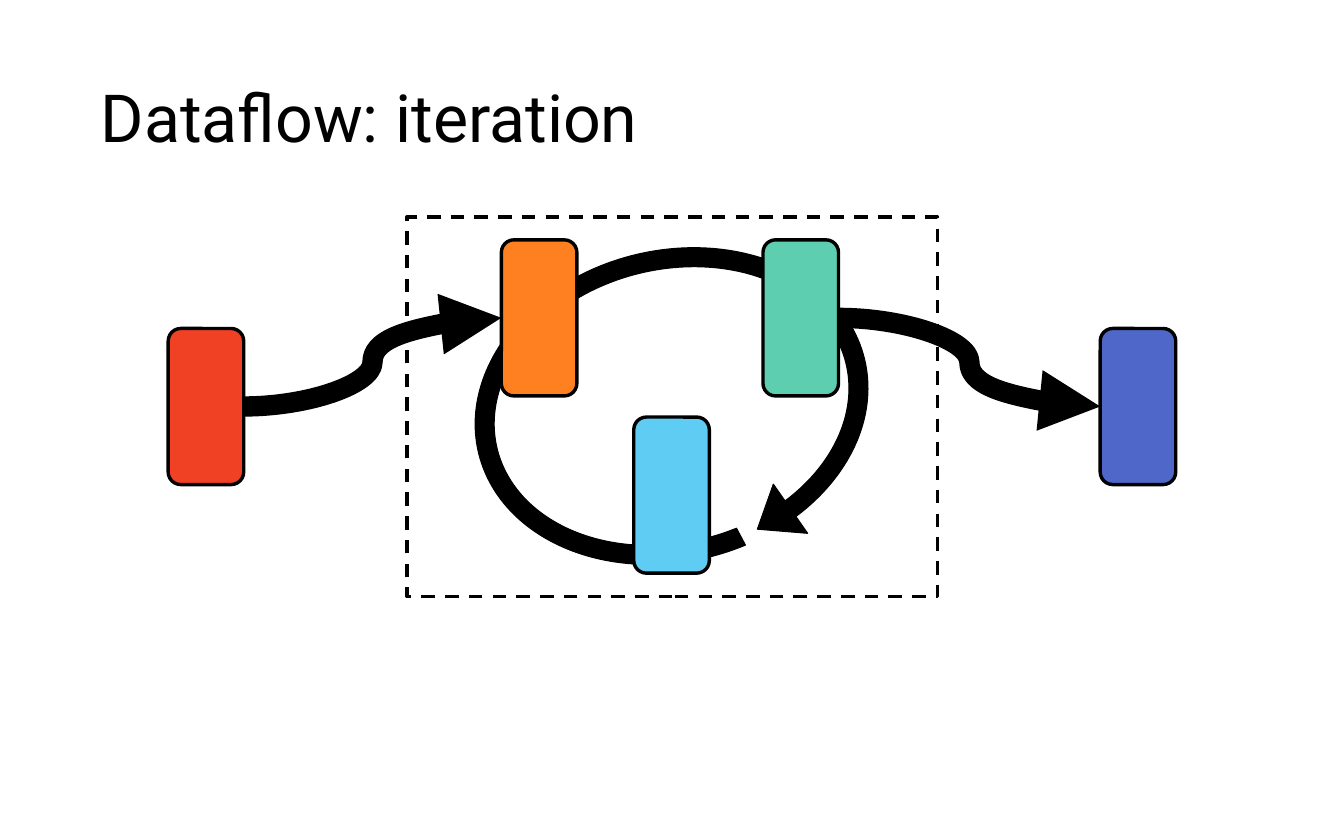
from collections import namedtuple
from dataclasses import dataclass

from lxml.etree import SubElement
from pptx import Presentation
from pptx.dml.color import RGBColor
from pptx.enum.dml import MSO_LINE
from pptx.enum.shapes import MSO_CONNECTOR, MSO_SHAPE
from pptx.enum.text import MSO_ANCHOR, MSO_AUTO_SIZE, PP_ALIGN
from pptx.oxml.ns import qn
from pptx.util import Emu, Pt

PX = 9144
Box = namedtuple("Box", "left top width height")


@dataclass(frozen=True)
class Theme:
    font: str = "Roboto"
    title_size: float = 58.7
    ink: str = "000000"
    source: str = "F14124"
    entry: str = "FF8021"
    exit: str = "5DCEAF"
    feedback: str = "5ECCF3"
    sink: str = "4E67C8"
    thin: int = 1
    outline: int = 3
    flow: int = 18


THEME = Theme()


def px(*lengths):
    return [Emu(length * PX) for length in lengths]


def inside(box, left, top, width, height):
    return Box(box.left + left, box.top + top, width, height)


def set_line(line, weight):
    line.color.rgb = RGBColor.from_string(THEME.ink)
    line.width = Pt(weight)


def add_block(slide, preset, box, fill, weight):
    block = slide.shapes.add_shape(preset, *px(*box))
    block.shadow.inherit = False
    if fill:
        block.fill.solid()
        block.fill.fore_color.rgb = RGBColor.from_string(fill)
    else:
        block.fill.background()
    set_line(block.line, weight)
    return block


def add_flow(slide, origin, target):
    start = (origin.left + origin.width, origin.top + origin.height // 2)
    end = (target.left, target.top + target.height // 2)
    flow = slide.shapes.add_connector(MSO_CONNECTOR.CURVE, *px(*start, *end))
    set_line(flow.line, THEME.flow)
    SubElement(flow.line._get_or_add_ln(), qn("a:tailEnd"), type="triangle")
    SubElement(flow._element.spPr, qn("a:effectLst"))


def draw_title(slide, box):
    title = slide.shapes.title
    title.left, title.top, title.width, title.height = px(*box)
    frame = title.text_frame
    frame.text = "Dataflow: iteration"
    frame.word_wrap = True
    frame.auto_size = MSO_AUTO_SIZE.NONE
    frame.vertical_anchor = MSO_ANCHOR.MIDDLE
    heading = frame.paragraphs[0]
    heading.alignment = PP_ALIGN.LEFT
    heading.line_spacing = 0.9
    font = heading.runs[0].font
    font.name = THEME.font
    font.size = Pt(THEME.title_size)
    font.color.rgb = RGBColor.from_string(THEME.ink)


def draw_cycle(slide, box):
    cycle = add_block(slide, MSO_SHAPE.CIRCULAR_ARROW, box, THEME.ink, THEME.thin)
    cycle.rotation = 346.2
    for index, value in enumerate((0.054, 8.578, 32.76, 45.488, 0.085)):
        cycle.adjustments[index] = value


def draw_dataflow(slide, box):
    outer_top, inner_top, feedback_top = 137, 28, 246
    source, entry, exit_stage, feedback, sink = [
        inside(box, left, top, 93, 192)
        for left, top in (
            (0, outer_top),
            (410, inner_top),
            (732, inner_top),
            (573, feedback_top),
            (1147, outer_top),
        )
    ]
    draw_cycle(slide, inside(box, 350, 16, 539, 433))
    add_flow(slide, source, entry)
    add_flow(slide, exit_stage, sink)
    for stage, color in (
        (source, THEME.source),
        (entry, THEME.entry),
        (exit_stage, THEME.exit),
        (feedback, THEME.feedback),
        (sink, THEME.sink),
    ):
        add_block(slide, MSO_SHAPE.ROUNDED_RECTANGLE, stage, color, THEME.outline)
    scope_box = inside(box, 294, 0, 653, box.height)
    scope = add_block(slide, MSO_SHAPE.RECTANGLE, scope_box, None, THEME.outline)
    scope.line.dash_style = MSO_LINE.DASH


def main():
    deck = Presentation()
    deck.slide_width, deck.slide_height = px(1654, 1000)
    slide = deck.slides.add_slide(deck.slide_layouts.get_by_name("Title Only"))
    draw_title(slide, Box(114, 53, 1426, 193))
    draw_dataflow(slide, Box(207, 267, 1240, 467))
    deck.save("out.pptx")


if __name__ == "__main__":
    main()
